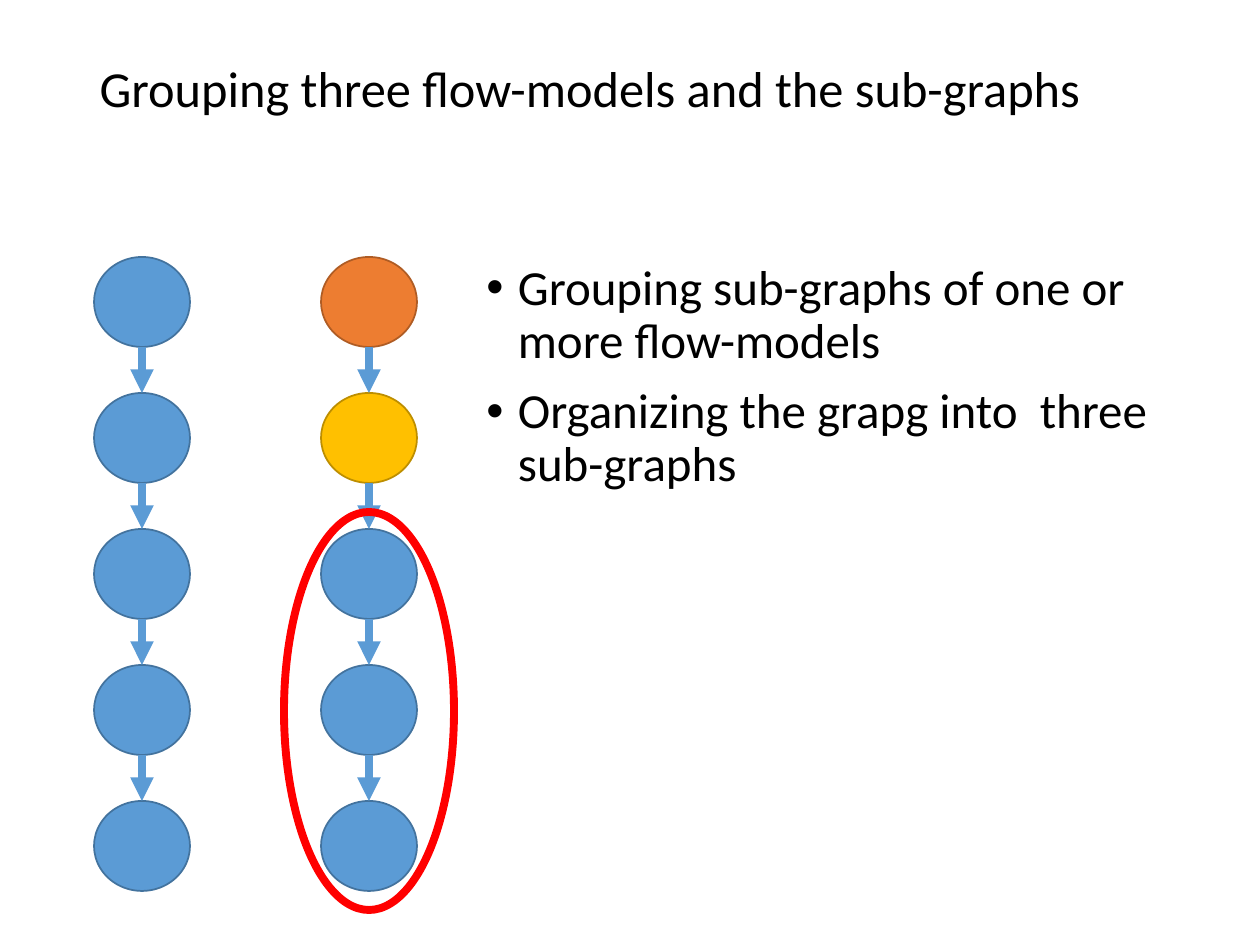
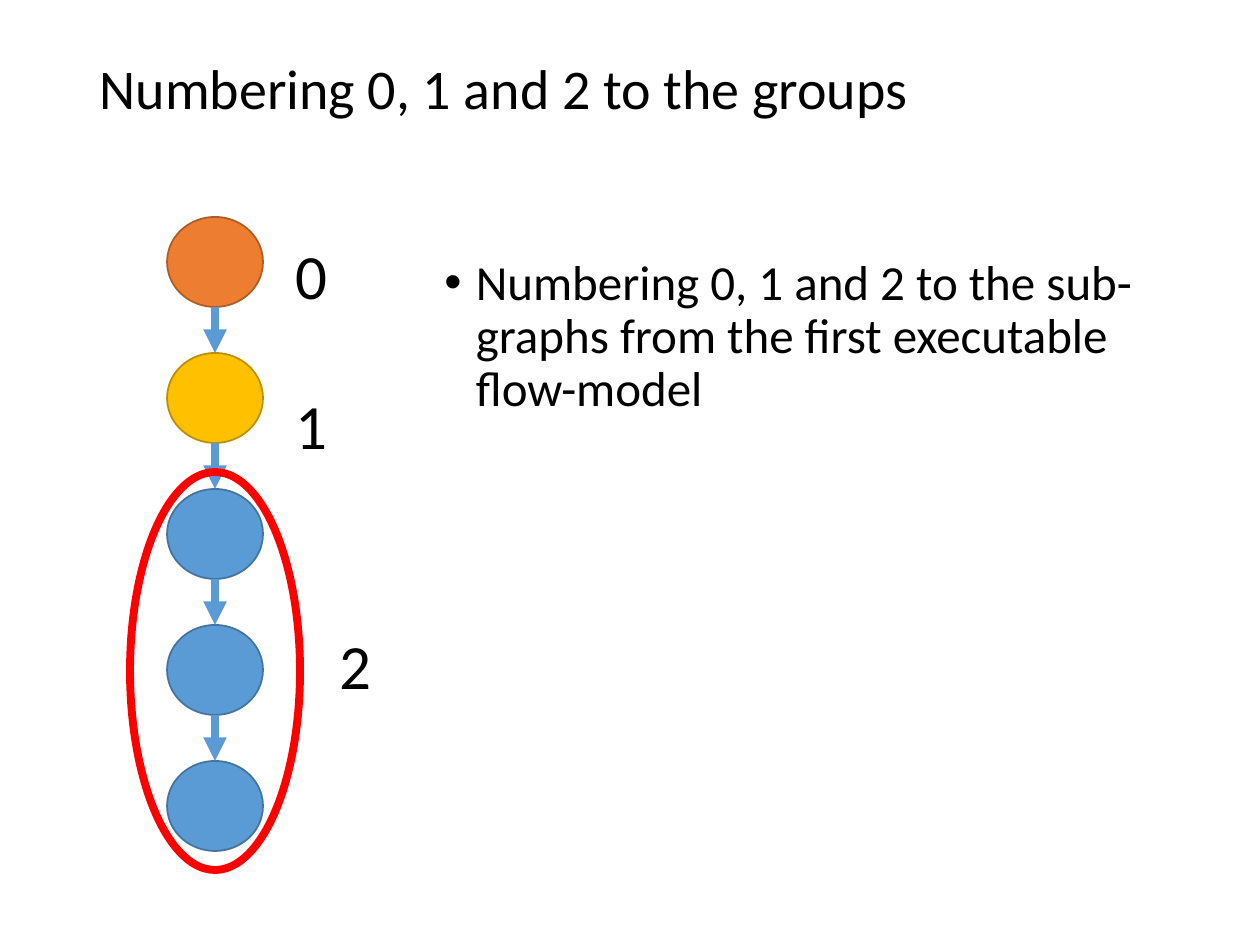
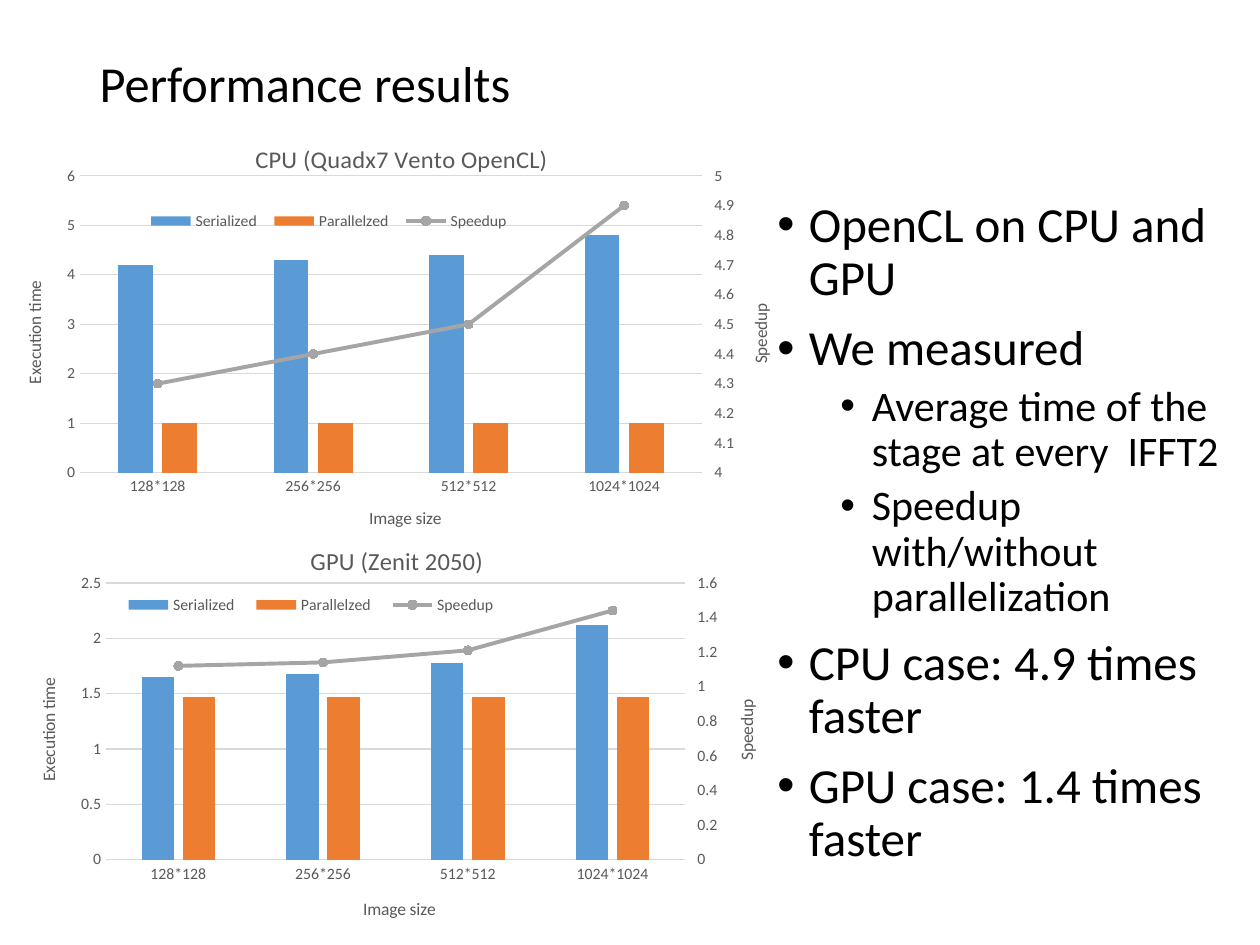
from copy import deepcopy

from pptx import Presentation
from pptx.chart.axis import ValueAxis
from pptx.chart.data import CategoryChartData
from pptx.dml.color import RGBColor
from pptx.enum.chart import (XL_CHART_TYPE, XL_LEGEND_POSITION as LEGEND,
                             XL_MARKER_STYLE as MARKER, XL_TICK_MARK as TICK)
from pptx.enum.shapes import MSO_CONNECTOR, MSO_SHAPE
from pptx.enum.text import MSO_ANCHOR, MSO_AUTO_SIZE, PP_ALIGN
from pptx.oxml import parse_xml
from pptx.oxml.ns import nsdecls, qn
from pptx.util import Emu, Pt

FONT = "Calibri"
BLACK = RGBColor(0x00, 0x00, 0x00)
RED = RGBColor(0xFF, 0x00, 0x00)
BLUE = RGBColor(0x5B, 0x9B, 0xD5)
ORANGE = RGBColor(0xED, 0x7D, 0x31)
YELLOW = RGBColor(0xFF, 0xC0, 0x00)
GRAY = RGBColor(0xA5, 0xA5, 0xA5)
LABEL = RGBColor(0x59, 0x59, 0x59)
GRID = RGBColor(0xD9, 0xD9, 0xD9)
OUTLINE = {BLUE: RGBColor(0x43, 0x73, 0x9E),
           ORANGE: RGBColor(0xAF, 0x5C, 0x24),
           YELLOW: RGBColor(0xBD, 0x8E, 0x00)}

NODE_W, NODE_H, NODE_STEP = 96, 90, 136
GROUPED = [ORANGE, YELLOW, BLUE, BLUE, BLUE]
SIZES = ["128*128", "256*256", "512*512", "1024*1024"]

# Boxes and points inside a chart are px from the chart's own corner.
CPU = dict(
    title="CPU (Quadx7 Vento OpenCL)", box=(15, 122, 762, 412),
    plot=(65, 55, 622, 303), legend=(124, 88, 380, 26), title_at=(236, 16),
    size_at=(351, 390), time_at=(5, 161), speedup_at=(731, 183),
    time_scale=(0, 6, 1), speedup_scale=(4, 5, 0.1),
    series={"Serialized": (4.2, 4.3, 4.4, 4.8),
            "Parallelzed": (1, 1, 1, 1),
            "Speedup": (4.3, 4.4, 4.5, 4.9)})
GPU = dict(
    title="GPU (Zenit 2050)", box=(15, 512, 761, 413),
    plot=(91, 71, 579, 277), legend=(97, 80, 398, 26), title_at=(291, 28),
    size_at=(345, 383), time_at=(19, 163), speedup_at=(717, 185),
    time_scale=(0, 2.5, 0.5), speedup_scale=(0, 1.6, 0.2),
    series={"Serialized": (1.65, 1.68, 1.78, 2.12),
            "Parallelzed": (1.47, 1.47, 1.47, 1.47),
            "Speedup": (1.12, 1.14, 1.21, 1.44)})


def px(n):
    return Emu(round(n * 914400 / 126))


def emu(*lengths):
    return [px(n) for n in lengths]


def style_font(font, size, color=BLACK):
    font.name, font.size, font.bold = FONT, Pt(size), False
    font.color.rgb = color


def write(p, text, size=28, color=BLACK, spacing=None, before=None, align=None):
    r = p.add_run()
    r.text = text
    style_font(r.font, size, color)
    if spacing:
        p.line_spacing = spacing
    if before is not None:
        p.space_before = Pt(before)
    if align is not None:
        p.alignment = align


def titled_slide(prs, title, size=28.8, height=83):
    s = prs.slides.add_slide(prs.slide_layouts[5])
    sp = s.shapes.title
    sp.left, sp.top, sp.width, sp.height = emu(87, 50, 1086, height)
    tf = sp.text_frame
    tf.auto_size, tf.vertical_anchor = MSO_AUTO_SIZE.NONE, MSO_ANCHOR.MIDDLE
    write(tf.paragraphs[0], title, size, spacing=0.9, align=PP_ALIGN.LEFT)
    return s


def bullet_list(s, box, items):
    """Items are (level, text) pairs."""
    tf = s.shapes.add_textbox(*emu(*box)).text_frame
    tf.word_wrap = True
    for i, (level, text) in enumerate(items):
        p = tf.add_paragraph() if i else tf.paragraphs[0]
        p.level = level
        write(p, text, 24 if level else 28, spacing=0.9, before=5 if level else 10)
        pPr = p._p.get_or_add_pPr()
        pPr.set("marL", str(px(94.5 if level else 31.5)))
        pPr.set("indent", str(-px(31.5)))
        pPr.append(parse_xml(f'<a:buFont {nsdecls("a")} typeface="Arial"/>'))
        pPr.append(parse_xml(f'<a:buChar {nsdecls("a")} char="•"/>'))


def ellipse(shapes, box, line, width, fill=None):
    sp = shapes.add_shape(MSO_SHAPE.OVAL, *emu(*box))
    sp.shadow.inherit = False
    if fill is None:
        sp.fill.background()
    else:
        sp.fill.solid()
        sp.fill.fore_color.rgb = fill
    sp.line.color.rgb, sp.line.width = line, Pt(width)
    return sp


def arrow_down(shapes, upper, lower):
    x = upper.left + upper.width // 2
    cxn = shapes.add_connector(MSO_CONNECTOR.STRAIGHT, x,
                               upper.top + upper.height, x, lower.top)
    cxn.end_connect(lower, 0)
    cxn.line.color.rgb, cxn.line.width = BLUE, Pt(4.5)
    cxn.line._get_or_add_ln().append(
        parse_xml(f'<a:tailEnd {nsdecls("a")} type="triangle"/>'))
    cxn._element.spPr.append(parse_xml(f'<a:effectLst {nsdecls("a")}/>'))


def flow_model(shapes, x, y, colors, ringed=False):
    """A column of nodes; the ring goes round the last three."""
    nodes = [ellipse(shapes, (x, y + i * NODE_STEP, NODE_W, NODE_H),
                     OUTLINE[color], 1, color)
             for i, color in enumerate(colors)]
    for upper, lower in zip(nodes, nodes[1:]):
        arrow_down(shapes, upper, lower)
    if ringed:
        ellipse(shapes, (x - 37, y + 255, 170, 398), RED, 4.5)


def place(element, index, chart_box, at, inner=False):
    """Give a chart part a manual layout, as its child at the index."""
    for old in element.findall(qn("c:layout")):
        element.remove(old)
    width, height = chart_box[2:]
    shares = [n / whole for n, whole in zip(at, (width, height) * 2)]
    modes = '<c:xMode val="edge"/><c:yMode val="edge"/>'
    target = '<c:layoutTarget val="inner"/>' if inner else ""
    values = "".join(f'<c:{k} val="{v:.4f}"/>' for k, v in zip("xywh", shares))
    element.insert(index, parse_xml(
        f'<c:layout {nsdecls("c")}><c:manualLayout>{target}{modes}{values}'
        '</c:manualLayout></c:layout>'))


def move_speedup_to_right_axis(chart):
    """Turn the last series into a line on a second pair of axes."""
    area = chart.element.xpath(".//c:plotArea")[0]
    bars, cat, val = (area.find(qn(f"c:{tag}")) for tag in ("barChart", "catAx", "valAx"))
    ser = bars.findall(qn("c:ser"))[-1]
    for flag in ser.findall(qn("c:invertIfNegative")):
        ser.remove(flag)
    line = parse_xml(
        f'<c:lineChart {nsdecls("c")}><c:grouping val="standard"/>'
        '<c:varyColors val="0"/><c:marker val="1"/>'
        '<c:axId val="5001"/><c:axId val="5002"/></c:lineChart>')
    line.insert(2, ser)
    bars.addnext(line)
    right, hidden = deepcopy(val), deepcopy(cat)
    for axis, own, other in ((right, "5002", "5001"), (hidden, "5001", "5002")):
        axis.find(qn("c:axId")).set("val", own)
        axis.find(qn("c:crossAx")).set("val", other)
    right.find(qn("c:axPos")).set("val", "r")
    right.find(qn("c:crosses")).set("val", "max")
    val.addnext(right)
    right.addnext(hidden)
    hidden.find(qn("c:delete")).set("val", "1")
    return ValueAxis(right)


def format_axis(axis, title, chart_box, at, tick=TICK.NONE, scale=None):
    axis.major_tick_mark, axis.minor_tick_mark = tick, TICK.NONE
    style_font(axis.tick_labels.font, 9, LABEL)
    write(axis.axis_title.text_frame.paragraphs[0], title, 10, LABEL)
    element = axis.axis_title.element
    place(element, 1, chart_box, at)
    if scale:
        axis.minimum_scale, axis.maximum_scale, axis.major_unit = scale
        axis.format.line.fill.background()
        body = element.xpath(".//a:bodyPr")[0]
        body.set("rot", "-5400000")
        body.set("vert", "horz")
    else:
        axis.format.line.color.rgb, axis.format.line.width = GRID, Pt(0.75)


def speedup_chart(s, title, box, plot, legend, title_at, size_at, time_at,
                  speedup_at, time_scale, speedup_scale, series):
    data = CategoryChartData()
    data.categories = SIZES
    for name, values in series.items():
        data.add_series(name, values)
    chart = s.shapes.add_chart(XL_CHART_TYPE.COLUMN_CLUSTERED, *emu(*box), data).chart
    style_font(chart.font, 10)
    # With two value axes, chart.value_axis would give the right one.
    left = chart.value_axis
    right = move_speedup_to_right_axis(chart)

    bars, lines = chart.plots
    bars.gap_width, bars.overlap, bars.vary_by_categories = 219, -27, False
    for ser, color in zip(bars.series, (BLUE, ORANGE)):
        ser.format.fill.solid()
        ser.format.fill.fore_color.rgb = color
    speedup = lines.series[0]
    speedup.smooth = False
    speedup.format.line.color.rgb, speedup.format.line.width = GRAY, Pt(2.25)
    marker = speedup.marker
    marker.style, marker.size = MARKER.CIRCLE, 5
    marker.format.fill.solid()
    marker.format.fill.fore_color.rgb = GRAY
    marker.format.line.color.rgb = GRAY

    format_axis(chart.category_axis, "Image size", box, size_at)
    format_axis(left, "Execution time", box, time_at, scale=time_scale)
    format_axis(right, "Speedup", box, speedup_at, TICK.OUTSIDE, speedup_scale)
    right.has_major_gridlines = False
    grid = left.major_gridlines.format.line
    grid.color.rgb, grid.width = GRID, Pt(0.75)

    chart.has_title = chart.has_legend = True
    write(chart.chart_title.text_frame.paragraphs[0], title, 14, LABEL)
    chart.legend.position = LEGEND.BOTTOM
    chart.legend.include_in_layout = False
    style_font(chart.legend.font, 9, LABEL)
    place(chart.chart_title.element, 1, box, title_at)
    place(chart.element.xpath(".//c:legend")[0], 1, box, legend)
    place(chart.element.xpath(".//c:plotArea")[0], 0, box, plot, inner=True)


def grouping_slide(prs):
    s = titled_slide(prs, "Grouping three flow-models and the sub-graphs")
    bullet_list(s, (474, 257, 747, 600), [
        (0, "Grouping sub-graphs of one or more flow-models"),
        (0, "Organizing the grapg into  three sub-graphs")])
    flow_model(s.shapes, 94, 257, [BLUE] * 5)
    flow_model(s.shapes.add_group_shape().shapes, 321, 257, GROUPED, ringed=True)


def numbering_slide(prs):
    s = titled_slide(prs, "Numbering 0, 1 and 2 to the groups", size=32)
    bullet_list(s, (432, 252, 741, 600), [
        (0, "Numbering 0, 1 and 2 to the sub-graphs from the first executable flow-model")])
    flow_model(s.shapes, 167, 217, GROUPED, ringed=True)
    for number, x, y in (("1", 283, 380), ("0", 283, 230), ("2", 327, 620)):
        tf = s.shapes.add_textbox(*emu(x, y, 58, 90)).text_frame
        tf.word_wrap = False
        write(tf.paragraphs[0], number, 36)


def results_slide(prs):
    s = titled_slide(prs, "Performance results", height=72)
    bullet_list(s, (765, 194, 495, 712), [
        (0, "OpenCL on CPU and GPU"),
        (0, "We measured"),
        (1, "Average time of the stage at every  IFFT2"),
        (1, "Speedup with/without parallelization"),
        (0, "CPU case: 4.9 times faster"),
        (0, "GPU case: 1.4 times faster")])
    for settings in (GPU, CPU):
        speedup_chart(s, **settings)


def main():
    prs = Presentation()
    prs.slide_width, prs.slide_height = emu(1260, 945)
    grouping_slide(prs)
    numbering_slide(prs)
    results_slide(prs)
    prs.save("out.pptx")


if __name__ == "__main__":
    main()
